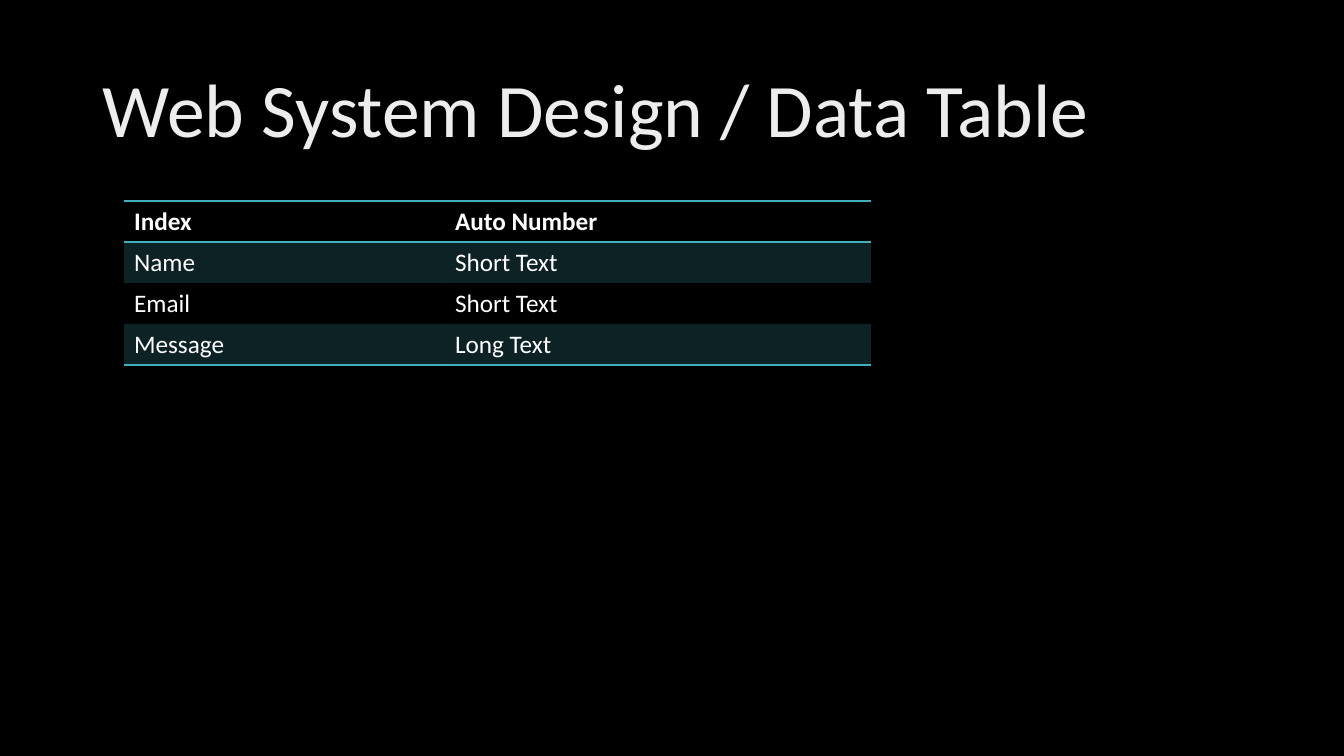
from lxml import etree
from pptx import Presentation
from pptx.dml.color import RGBColor
from pptx.enum.text import MSO_ANCHOR
from pptx.oxml.ns import qn
from pptx.util import Pt

TITLE = "Web System Design / Data Table"
FIELDS = [
    ("Index", "Auto Number"),
    ("Name", "Short Text"),
    ("Email", "Short Text"),
    ("Message", "Long Text"),
]
COL_WIDTHS = (321, 426)
ROW_HEIGHT = 41
TABLE_LEFT, TABLE_TOP = 124, 201
FONT = "Calibri"
NO_STYLE = "{2D5ABB26-0587-4C30-8999-92F81FD0307C}"

BLACK = RGBColor(0x00, 0x00, 0x00)
WHITE = RGBColor(0xFF, 0xFF, 0xFF)
PALE = RGBColor(0xED, 0xED, 0xED)
TEAL = RGBColor(0x41, 0xAE, 0xBD)


def px(n):
    return round(n * 914400 / 100.8)


def add_run(p, text, size, color, bold=False):
    r = p.add_run()
    r.text = text
    r.font.name = FONT
    r.font.size = Pt(size)
    r.font.bold = bold
    r.font.color.rgb = color


def set_borders(cell, tags):
    tcPr = cell._tc.get_or_add_tcPr()
    for i, tag in enumerate(tags):
        ln = etree.Element(qn(tag), w=str(Pt(1)))
        fill = etree.SubElement(ln, qn("a:solidFill"))
        etree.SubElement(fill, qn("a:srgbClr"), val=str(TEAL))
        tcPr.insert(i, ln)


def fill_band(cell):
    cell.fill.solid()
    cell.fill.fore_color.rgb = TEAL
    color = cell._tc.tcPr.find(qn("a:solidFill")).find(qn("a:srgbClr"))
    etree.SubElement(color, qn("a:alpha"), val="20000")


def add_title(s):
    tf = s.shapes.add_textbox(px(93), px(40), px(1159), px(146)).text_frame
    tf.word_wrap = True
    tf.vertical_anchor = MSO_ANCHOR.MIDDLE
    p = tf.paragraphs[0]
    p.line_spacing = 0.9
    add_run(p, TITLE, 54, PALE)


def add_fields(s):
    last = len(FIELDS) - 1
    table = s.shapes.add_table(
        len(FIELDS), len(COL_WIDTHS), px(TABLE_LEFT), px(TABLE_TOP),
        px(sum(COL_WIDTHS)), px(ROW_HEIGHT * len(FIELDS))).table
    table.first_row = table.horz_banding = False
    table._tbl.tblPr.find(qn("a:tableStyleId")).text = NO_STYLE
    for column, width in zip(table.columns, COL_WIDTHS):
        column.width = px(width)
    for i, field in enumerate(FIELDS):
        table.rows[i].height = px(ROW_HEIGHT)
        for j, text in enumerate(field):
            cell = table.cell(i, j)
            add_run(cell.text_frame.paragraphs[0], text, 18, WHITE, i == 0)
            if i % 2:
                fill_band(cell)
            else:
                cell.fill.background()
            if i == 0:
                set_borders(cell, ("a:lnT", "a:lnB"))
            elif i == last:
                set_borders(cell, ("a:lnB",))


def main():
    prs = Presentation()
    prs.slide_width, prs.slide_height = px(1344), px(756)
    s = prs.slides.add_slide(prs.slide_layouts[6])
    s.background.fill.solid()
    s.background.fill.fore_color.rgb = BLACK
    add_title(s)
    add_fields(s)
    prs.save("out.pptx")


if __name__ == "__main__":
    main()
